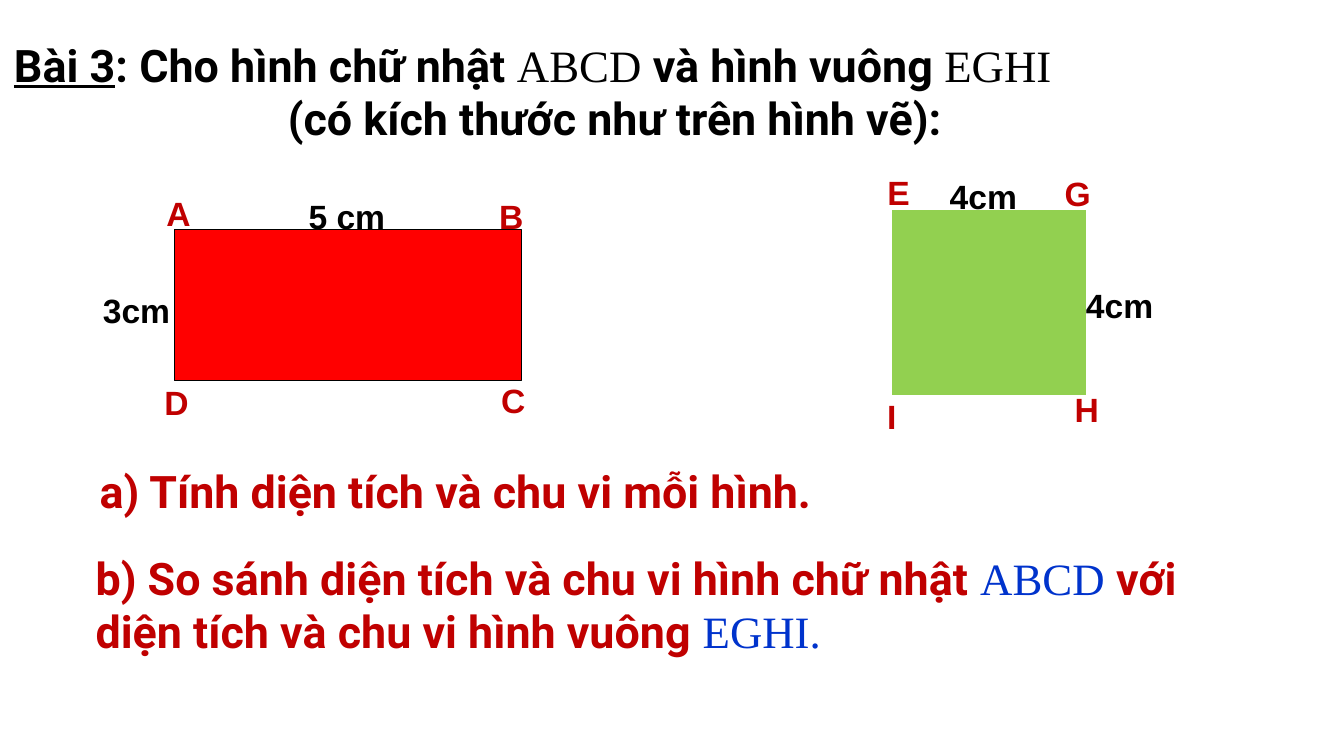
from pptx import Presentation
from pptx.dml.color import RGBColor
from pptx.enum.shapes import MSO_SHAPE
from pptx.enum.text import MSO_AUTO_SIZE, PP_ALIGN
from pptx.util import Inches, Pt

BLACK = RGBColor(0x00, 0x00, 0x00)
WHITE = RGBColor(0xFF, 0xFF, 0xFF)
RED = RGBColor(0xFF, 0x00, 0x00)
GREEN = RGBColor(0x92, 0xD0, 0x50)
DARK_RED = RGBColor(0xC0, 0x00, 0x00)
BLUE = RGBColor(0x00, 0x33, 0xCC)

# Figures: left, top, width, height, fill, line colour, line width
FIGURES = [
    (1.73, 2.28, 3.44, 1.5, RED, BLACK, 0.75),
    (8.84, 2.07, 1.94, 1.86, GREEN, WHITE, 1.5),
]

# Labels: text, left, top, width
VERTICES = [
    ("A", 1.52, 1.84, 0.44), ("B", 4.82, 1.87, 0.49),
    ("C", 4.84, 3.7, 0.57), ("D", 1.5, 3.72, 0.44),
    ("E", 8.67, 1.64, 0.78), ("G", 10.43, 1.65, 0.48),
    ("H", 10.53, 3.79, 0.67), ("I", 8.67, 3.86, 0.53),
]
LENGTHS = [
    ("5 cm", 2.93, 1.87, 1.71), ("3cm", 0.89, 2.81, 0.99),
    ("4cm", 10.64, 2.76, 1.18), ("4cm", 9.29, 1.68, 1.03),
]
LABEL_HEIGHT = 0.54

# Run formats
LABEL = dict(name="Arial", size=Pt(24), bold=True)
WORDS = dict(name="Roboto", size=Pt(32), bold=True)
NAMES = dict(name="Times New Roman", size=Pt(32), bold=False)
HEADING = dict(WORDS, underline=True)

# Statements: box, then paragraphs of (text, format, colour) runs
STATEMENTS = [
    ((0.04, 0.32, 11.79, 1.18), [
        [("Bài 3", HEADING, BLACK),
         (": Cho hình chữ nhật ", WORDS, BLACK),
         ("ABCD ", NAMES, BLACK),
         ("và hình vuông ", WORDS, BLACK),
         ("EGHI", NAMES, BLACK)],
        [("(có kích thước như trên hình vẽ):", WORDS, BLACK)],
    ]),
    ((0.89, 4.55, 8.81, 0.64), [
        [("a) Tính diện tích và chu vi mỗi hình.", WORDS, DARK_RED)],
    ]),
    ((0.85, 5.41, 11.43, 1.18), [
        [("b) So sánh diện tích và chu vi hình chữ nhật ", WORDS, DARK_RED),
         ("ABCD ", NAMES, BLUE),
         ("với diện tích và chu vi hình vuông ", WORDS, DARK_RED),
         ("EGHI.", NAMES, BLUE)],
    ]),
]


def add_text(s, box, paragraphs, inset_x, inset_y):
    tf = s.shapes.add_textbox(*map(Inches, box)).text_frame
    frame = dict(word_wrap=True, auto_size=MSO_AUTO_SIZE.SHAPE_TO_FIT_TEXT,
                 margin_left=Inches(inset_x), margin_right=Inches(inset_x),
                 margin_top=Inches(inset_y), margin_bottom=Inches(inset_y))
    for key, value in frame.items():
        setattr(tf, key, value)
    for i, runs in enumerate(paragraphs):
        p = tf.paragraphs[0] if i == 0 else tf.add_paragraph()
        for text, style, color in runs:
            r = p.add_run()
            r.text = text
            for key, value in style.items():
                setattr(r.font, key, value)
            r.font.color.rgb = color
    return tf


prs = Presentation()
prs.slide_width, prs.slide_height = Inches(13.33), Inches(7.5)
s = prs.slides.add_slide(prs.slide_layouts[6])

# Rectangle ABCD and square EGHI
for *box, fill, line, width in FIGURES:
    sp = s.shapes.add_shape(MSO_SHAPE.RECTANGLE, *map(Inches, box))
    sp.shadow.inherit = False
    sp.fill.solid()
    sp.fill.fore_color.rgb = fill
    sp.line.color.rgb = line
    sp.line.width = Pt(width)

# Vertex letters and side lengths
for labels, color in ((VERTICES, DARK_RED), (LENGTHS, BLACK)):
    for text, left, top, width in labels:
        add_text(s, (left, top, width, LABEL_HEIGHT),
                 [[(text, LABEL, color)]], 0.13, 0.07)

# Problem statement and questions
frames = [add_text(s, box, paragraphs, 0.1, 0.05)
          for box, paragraphs in STATEMENTS]

# Second heading line is centred with a small left indent
p = frames[0].paragraphs[1]
p.alignment = PP_ALIGN.CENTER
p._p.get_or_add_pPr().set("marL", str(Inches(0.33)))

prs.save("out.pptx")
